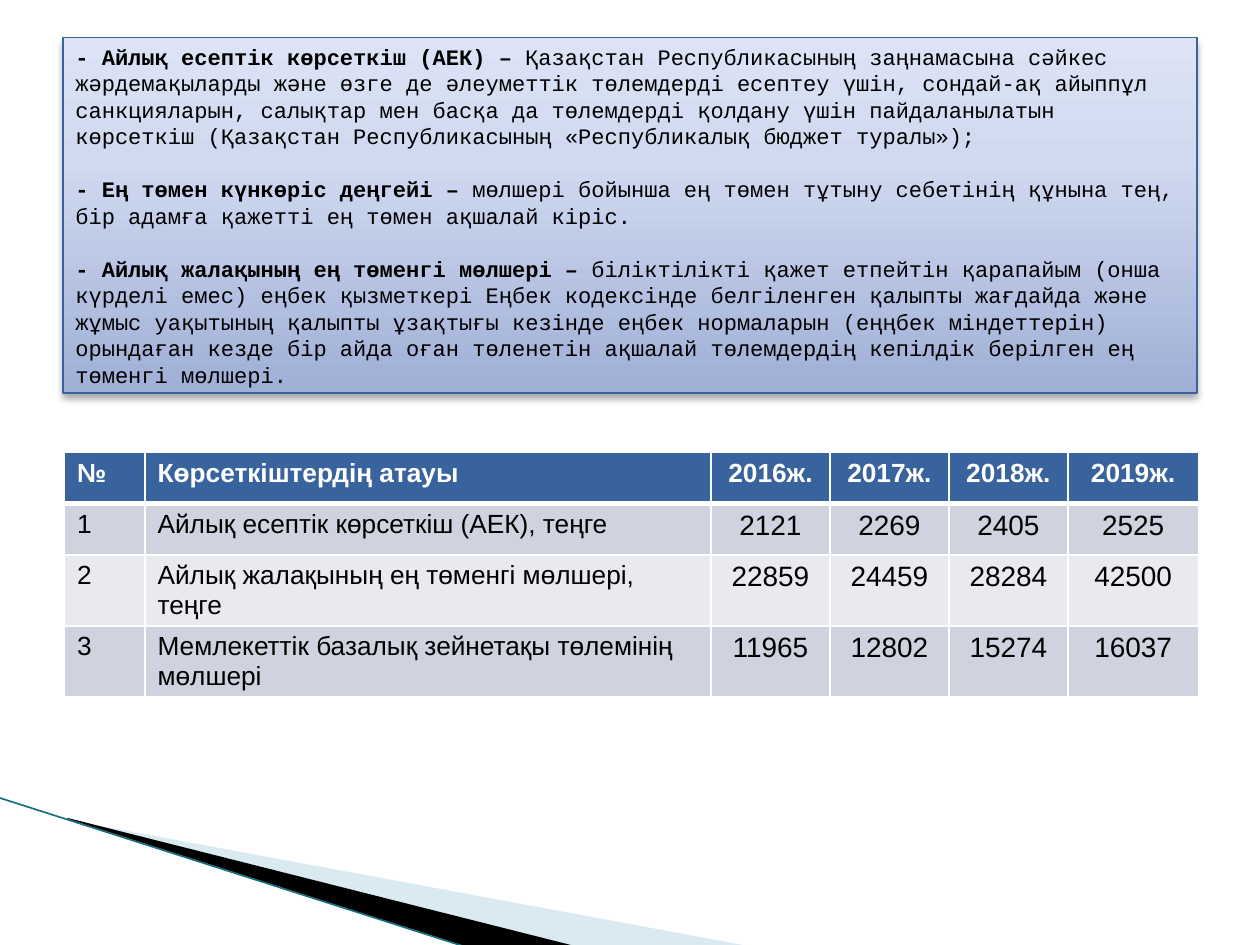
import lxml.etree
import pptx
import pptx.dml.color
import pptx.enum.shapes
import pptx.enum.text
import pptx.oxml
import pptx.oxml.ns
import pptx.util

Pt = pptx.util.Pt
qn = pptx.oxml.ns.qn
NAMESPACE = 'xmlns:a="http://schemas.openxmlformats.org/drawingml/2006/main"'
COLORS = {
    "black": "000000", "white": "FFFFFF", "blue": "39639D",
    "grad_bottom": "9FAFD6", "grad_middle": "D0D9EF", "grad_top": "DCE3F6",
    "band_dark": "CED3DF", "band_light": "E8EAEF",
    "swoosh": "A0CBDC", "swoosh_line": "1A7080",
}
ALIGN = pptx.enum.text.PP_ALIGN
ANCHOR = pptx.enum.text.MSO_ANCHOR


def rgb(name):
    return pptx.dml.color.RGBColor.from_string(COLORS[name])


def write_run(paragraph, text, color, values):
    run = paragraph.add_run()
    run.text = text
    run.font.color.rgb = rgb(color)
    for name, value in values.items():
        setattr(run.font, name, value)


presentation = pptx.Presentation()
presentation.slide_width = Pt(720)
presentation.slide_height = Pt(540)
slide = presentation.slides.add_slide(presentation.slide_layouts[6])

swooshes = [
    ("swoosh", 40, (56.2, 393.8, 299.5, 113.8),
     [(39.6, 468.7), (428.4, 540.7), (328.3, 540.7), (39.6, 468)]),
    ("black", 100, (-4.3, 455.8, 299.5, 66.2),
     [(38.2, 467.3), (329, 540.7), (267.8, 541.4), (38.9, 468)]),
]
for color, opacity, frame_box, points in swooshes:
    corners = [(Pt(x), Pt(y)) for x, y in points]
    builder = slide.shapes.build_freeform(*corners[0], scale=1.0)
    builder.add_line_segments(corners[1:], close=True)
    shape = builder.convert_to_shape()
    shape.shadow.inherit = False
    shape.fill.solid()
    shape.fill.fore_color.rgb = rgb(color)
    shape.line.fill.background()
    left, top, width, height = [Pt(value) for value in frame_box]
    shape.left, shape.top, shape.width, shape.height = left, top, width, height
    outline = shape._element.spPr.find(".//" + qn("a:path"))
    outline.set("w", str(width))
    outline.set("h", str(height))
    for point, (x, y) in zip(outline.iter(qn("a:pt")), corners):
        point.set("x", str(x - left))
        point.set("y", str(y - top))
    if opacity < 100:
        fill_color = shape._element.spPr.find(".//" + qn("a:srgbClr"))
        lxml.etree.SubElement(fill_color, qn("a:alpha"), val=str(opacity * 1000))

edge = slide.shapes.add_connector(
    pptx.enum.shapes.MSO_CONNECTOR.STRAIGHT, Pt(-0.7), Pt(455.8), Pt(267), Pt(541.4))
edge.line.color.rgb = rgb("swoosh_line")
edge.line.width = Pt(0.95)
lxml.etree.SubElement(edge._element.spPr, qn("a:effectLst"))

definitions = [
    ("- Айлық есептік көрсеткіш (АЕК) – ",
     "Қазақстан Республикасының заңнамасына сәйкес жәрдемақыларды және өзге де "
     "әлеуметтік төлемдерді есептеу үшін, сондай-ақ айыппұл санкцияларын, салықтар "
     "мен басқа да төлемдерді қолдану үшін пайдаланылатын көрсеткіш (Қазақстан "
     "Республикасының «Республикалық бюджет туралы»);"),
    ("- Ең төмен күнкөріс деңгейі – ",
     "мөлшері бойынша ең төмен тұтыну себетінің құнына тең, бір адамға қажетті ең "
     "төмен ақшалай кіріс."),
    ("- Айлық жалақының ең төменгі мөлшері – ",
     "біліктілікті қажет етпейтін қарапайым (онша күрделі емес) еңбек қызметкері "
     "Еңбек кодексінде белгіленген қалыпты жағдайда және жұмыс уақытының қалыпты "
     "ұзақтығы кезінде еңбек нормаларын (еңңбек міндеттерін) орындаған кезде бір "
     "айда оған төленетін ақшалай төлемдердің кепілдік берілген ең төменгі мөлшері."),
]
box = slide.shapes.add_shape(
    pptx.enum.shapes.MSO_SHAPE.RECTANGLE, Pt(36), Pt(21.6), Pt(648), Pt(203))
box.shadow.inherit = False
box.line.color.rgb = rgb("blue")
box.line.width = Pt(0.75)
stops = "".join(
    f'<a:gs pos="{position * 1000}"><a:srgbClr val="{COLORS[color]}"/></a:gs>'
    for position, color in [(0, "grad_bottom"), (65, "grad_middle"), (100, "grad_top")])
box._element.spPr.find(qn("a:prstGeom")).addnext(pptx.oxml.parse_xml(
    f'<a:gradFill {NAMESPACE} rotWithShape="1"><a:gsLst>{stops}</a:gsLst>'
    '<a:lin ang="16200000" scaled="0"/></a:gradFill>'))
box._element.spPr.find(qn("a:effectLst")).append(pptx.oxml.parse_xml(
    f'<a:outerShdw {NAMESPACE} blurRad="{Pt(4)}" dist="{Pt(3)}" dir="5400000" '
    f'rotWithShape="0"><a:srgbClr val="{COLORS["black"]}">'
    '<a:alpha val="35000"/></a:srgbClr></a:outerShdw>'))
frame = box.text_frame
frame.word_wrap = True
frame.vertical_anchor = ANCHOR.MIDDLE
for index, (term, meaning) in enumerate(definitions):
    paragraph = frame.add_paragraph() if index else frame.paragraphs[0]
    paragraph.alignment = ALIGN.LEFT
    paragraph.line_spacing = Pt(15.15)
    paragraph.space_after = Pt(15.15 if index < len(definitions) - 1 else 0)
    for text, bold in [(term, True), (meaning, False)]:
        write_run(paragraph, text, "black",
                  {"name": "Courier New", "size": Pt(12.6), "bold": bold})

rows = [
    ["№", "Көрсеткіштердің атауы", "2016ж.", "2017ж.", "2018ж.", "2019ж."],
    ["1", "Айлық есептік көрсеткіш (АЕК), теңге", "2121", "2269", "2405", "2525"],
    ["2", "Айлық жалақының ең төменгі мөлшері, теңге",
     "22859", "24459", "28284", "42500"],
    ["3", "Мемлекеттік базалық зейнетақы төлемінің мөлшері",
     "11965", "12802", "15274", "16037"],
]
column_widths = [46, 323.4, 68, 68, 68, 74.6]
row_heights = [29.2, 29.2, 40.5, 40.5]
row_fills = ["blue", "band_dark", "band_light", "band_dark"]
table = slide.shapes.add_table(
    len(rows), len(column_widths), Pt(36.9), Pt(258.7),
    Pt(sum(column_widths)), Pt(sum(row_heights))).table
for column, width in zip(table.columns, column_widths):
    column.width = Pt(width)
for row_index, texts in enumerate(rows):
    table.rows[row_index].height = Pt(row_heights[row_index])
    header = row_index == 0
    for column_index, text in enumerate(texts):
        cell = table.cell(row_index, column_index)
        number = column_index > 1
        paragraph = cell.text_frame.paragraphs[0]
        paragraph.alignment = ALIGN.CENTER if number else ALIGN.LEFT
        write_run(paragraph, text, "white" if header else "black",
                  {"name": "Arial", "size": Pt(16 if number and not header else 15),
                   "bold": header})
        borders = {"lnL": 1, "lnR": 1, "lnT": 3 if row_index == 1 else 1,
                   "lnB": 3 if header else 1}
        for side, width in borders.items():
            cell._tc.get_or_add_tcPr().append(pptx.oxml.parse_xml(
                f'<a:{side} {NAMESPACE} w="{Pt(width)}"><a:solidFill>'
                f'<a:srgbClr val="{COLORS["white"]}"/></a:solidFill></a:{side}>'))
        cell.fill.solid()
        cell.fill.fore_color.rgb = rgb(row_fills[row_index])

presentation.save("out.pptx")
